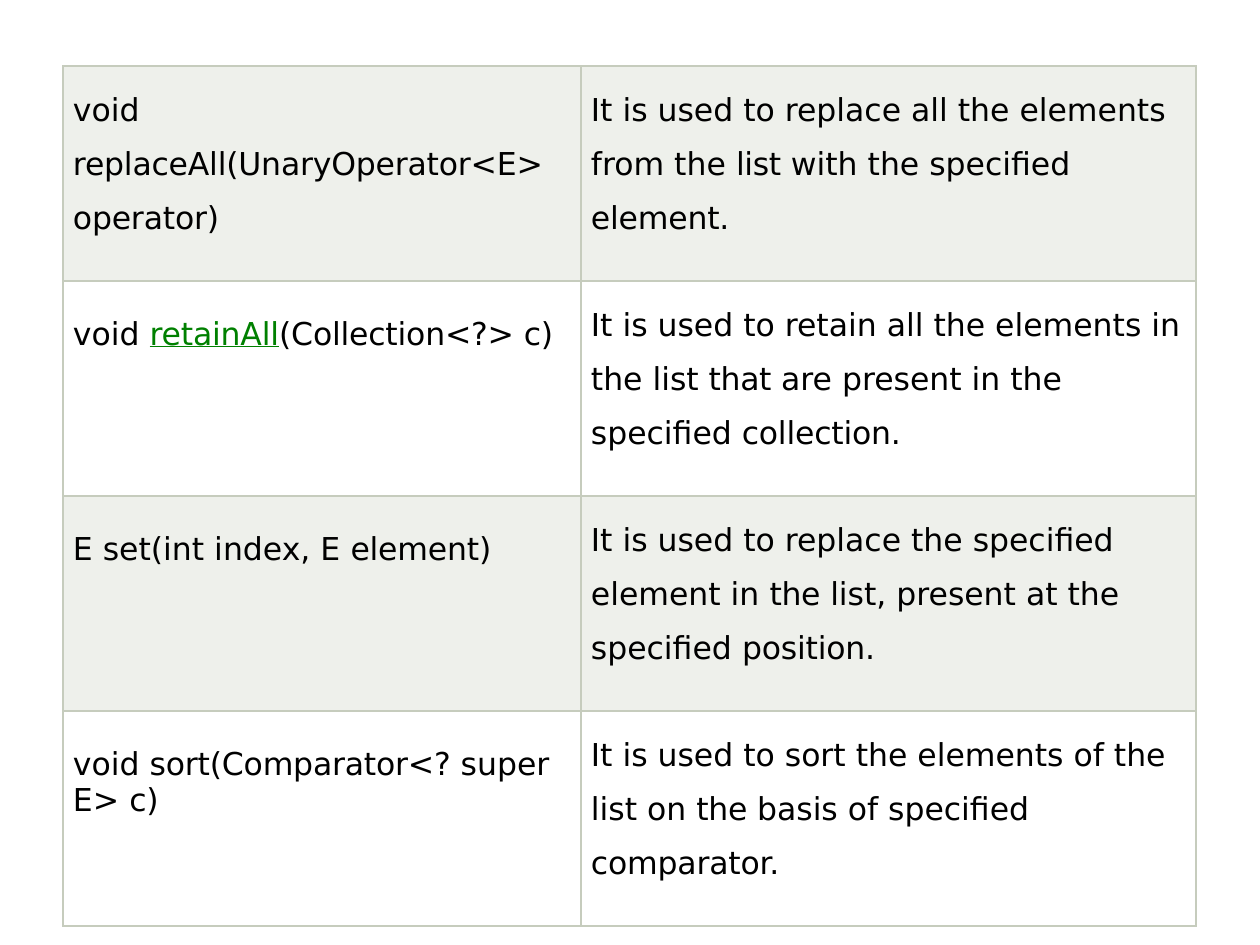
from dataclasses import dataclass

from lxml import etree
from pptx import Presentation
from pptx.dml.color import RGBColor
from pptx.oxml import ns
from pptx.table import _Cell
from pptx.util import Emu, Pt

PX = 914400 // 126
FONT = "DejaVu Sans"
TEXT, LINK, BAND, RULE = "000000", "008000", "EEF0EB", "C6CCBD"
COLUMNS = (518, 615)
ROW_HEIGHT = 215
INDENT = 10
TALL_LINES = 1.49


@dataclass(frozen=True)
class Span:
    text: str
    tracking: int = 0  # hundredths of a point
    link: bool = False


@dataclass(frozen=True)
class Method:
    signature: tuple[Span, ...]
    purpose: tuple[Span, ...]
    tall: bool = False  # signature set with the wide line spacing


METHODS = (
    Method(
        (Span("void "), Span("replaceAll(UnaryOperator<E> operator)", -10)),
        (Span("It is used to replace all the elements from the "), Span("list ", -20),
         Span("with the specified "), Span("element.", -10)),
        tall=True,
    ),
    Method(
        (Span("void "), Span("retainAll", -10, link=True),
         Span("(Collection<?> ", -10), Span("c)", -20)),
        (Span("It is used to retain all the elements in the list"), Span(" that ", -20),
         Span("are present in the specified"), Span(" collection.", -10)),
    ),
    Method(
        (Span("E set(int index, E "), Span("element)", -10)),
        (Span("It is used to replace the specified element in "), Span("the ", -20),
         Span("list, present at the specified "), Span("position.", -10)),
    ),
    Method(
        (Span("void "), Span("sort(Comparator<? ", -10), Span("super E> "), Span("c)", -20)),
        (Span("It is used to sort the elements of the list on "), Span("the ", -20),
         Span("basis of specified "), Span("comparator.", -10)),
    ),
)


def px(length: int) -> Emu:
    return Emu(length * PX)


def color(value: str) -> RGBColor:
    return RGBColor.from_string(value)


def add_borders(cell: _Cell) -> None:
    """Rule all four sides; borders must precede the fill in the cell properties."""
    properties = cell._tc.get_or_add_tcPr()
    for index, side in enumerate(("lnL", "lnR", "lnT", "lnB")):
        line = etree.Element(ns.qn(f"a:{side}"), w=str(Pt(0.75)))
        fill = etree.SubElement(line, ns.qn("a:solidFill"))
        etree.SubElement(fill, ns.qn("a:srgbClr"), val=RULE)
        properties.insert(index, line)


def fill_cell(cell: _Cell, spans: tuple[Span, ...], tall: bool, banded: bool) -> None:
    margins = {"margin_left": INDENT, "margin_right": 0,
               "margin_top": 8 if tall else 35, "margin_bottom": 0}
    for name, length in margins.items():
        setattr(cell, name, px(length))
    if banded:
        cell.fill.solid()
        cell.fill.fore_color.rgb = color(BAND)
    else:
        cell.fill.background()
    add_borders(cell)

    para = cell.text_frame.paragraphs[0]
    if tall:
        para.line_spacing = TALL_LINES
    for span in spans:
        run = para.add_run()
        run.text = span.text
        formats = {"name": FONT, "size": Pt(18), "bold": False, "underline": span.link}
        for name, value in formats.items():
            setattr(run.font, name, value)
        run.font.color.rgb = color(LINK if span.link else TEXT)
        if span.tracking:
            run._r.get_or_add_rPr().set("spc", str(span.tracking))


def main() -> None:
    deck = Presentation()
    deck.slide_width, deck.slide_height = px(1260), px(945)
    page = deck.slides.add_slide(deck.slide_layouts[6])
    table = page.shapes.add_table(
        len(METHODS), len(COLUMNS), px(63), px(66),
        px(sum(COLUMNS)), px(ROW_HEIGHT * len(METHODS)),
    ).table
    table.first_row = table.horz_banding = False
    for column, width in zip(table.columns, COLUMNS):
        column.width = px(width)
    for index, method in enumerate(METHODS):
        table.rows[index].height = px(ROW_HEIGHT)
        banded = index % 2 == 0
        fill_cell(table.cell(index, 0), method.signature, method.tall, banded)
        fill_cell(table.cell(index, 1), method.purpose, True, banded)
    deck.save("out.pptx")


if __name__ == "__main__":
    main()
